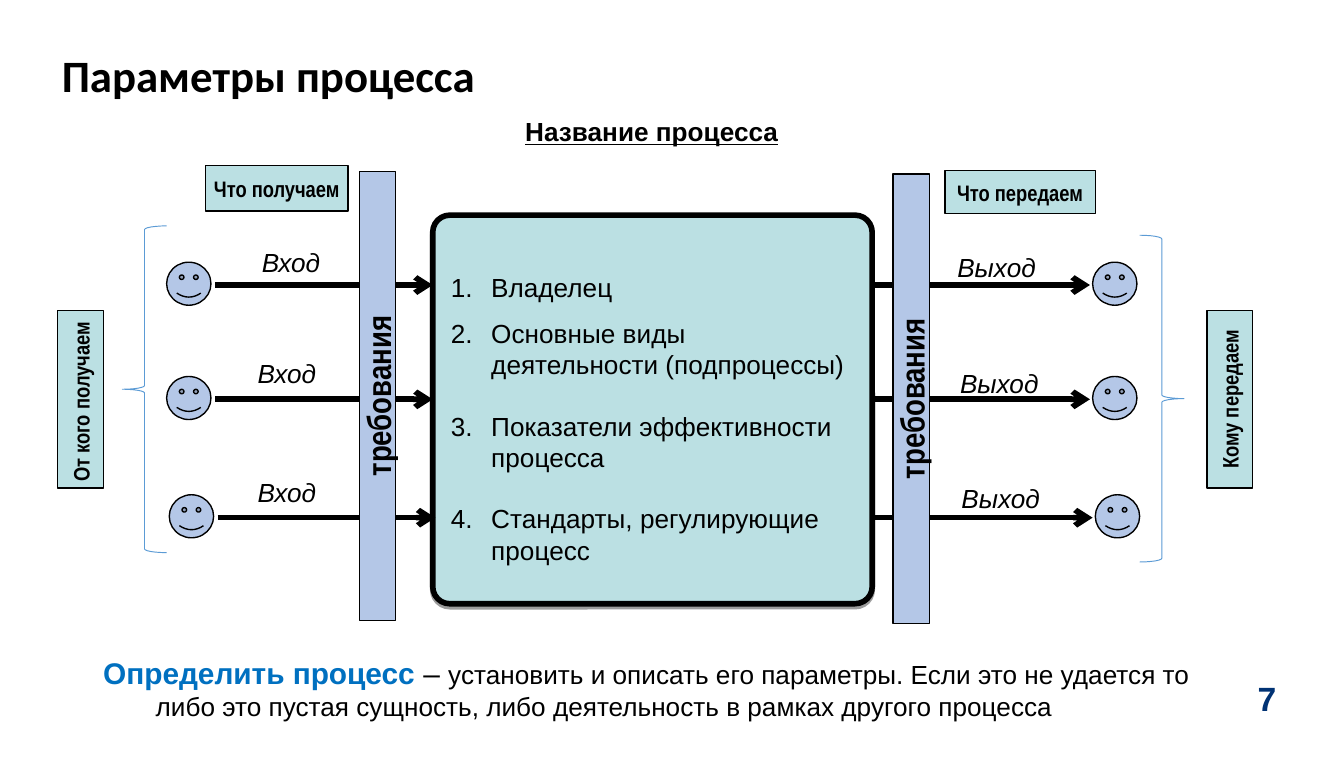
from dataclasses import dataclass

from lxml.etree import SubElement
from pptx import Presentation
from pptx.dml.color import RGBColor
from pptx.enum.shapes import MSO_CONNECTOR, MSO_SHAPE as SHAPE
from pptx.enum.text import MSO_ANCHOR as ANCHOR, PP_ALIGN as ALIGN
from pptx.oxml.ns import qn
from pptx.util import Inches, Pt

COLUMN = Inches(0.1)  # square grid: 100 columns across the slide
COLUMNS, ROWS = 100, 56.3


@dataclass(frozen=True)
class Theme:
    black: str = "000000"
    teal: str = "BBE0E3"
    blue: str = "B4C7E7"
    brace: str = "5B9BD5"
    accent: str = "0070C0"
    navy: str = "003274"
    font: str = "Arial"
    narrow: str = "Arial Narrow"
    heading: str = "Calibri"
    title: int = 24
    large: int = 18
    lead: int = 16
    body: int = 14
    small: int = 12


T = Theme()
ITEMS = [  # text, space before in points
    ("Владелец", 0),
    ("Основные виды деятельности (подпроцессы)", 8),
    ("Показатели эффективности процесса", 16),
    ("Стандарты, регулирующие процесс", 16),
]
FLOW_ROWS = [(0, 21.2), (0, 29.7), (0.2, 38.5)]  # shift right, row
INPUT_LABELS = [(17.2, 17.8), (16.9, 26.1), (16.9, 34.9)]
OUTPUT_LABELS = [(69.7, 18.2), (69.9, 26.8), (70, 35.4)]


def grid(*cells):
    return [round(c * COLUMN) for c in cells]


def style(r, size, color=T.black, name=T.font, **flags):
    r.font.size, r.font.name = Pt(size), name
    r.font.color.rgb = RGBColor.from_string(color)
    for flag, value in flags.items():
        setattr(r.font, flag, value)


def indent(p, columns):
    """Hanging indent."""
    pPr = p._p.get_or_add_pPr()
    pPr.set("marL", str(round(columns * COLUMN)))
    pPr.set("indent", str(-round(columns * COLUMN)))
    return pPr


def add_shape(slide, kind, box, fill=None, line=T.black, weight=0.75, turn=0):
    sp = slide.shapes.add_shape(kind, *grid(*box))
    sp.shadow.inherit = False
    if fill:
        sp.fill.solid()
        sp.fill.fore_color.rgb = RGBColor.from_string(fill)
    else:
        sp.fill.background()
    sp.line.color.rgb = RGBColor.from_string(line)
    sp.line.width = Pt(weight)
    sp.rotation = turn
    return sp


def add_plate(slide, text, box, fill=T.teal, size=T.small, turn=0):
    """Filled rectangle with one bold line of text."""
    tf = add_shape(slide, SHAPE.RECTANGLE, box, fill, turn=turn).text_frame
    tf.word_wrap = False
    tf.vertical_anchor = ANCHOR.MIDDLE
    p = tf.paragraphs[0]
    p.text, p.alignment = text, ALIGN.CENTER
    style(p.runs[0], size, name=T.narrow, bold=True)


def add_text(slide, text, box, size=T.body, color=T.black, align=ALIGN.CENTER, **flags):
    tf = slide.shapes.add_textbox(*grid(*box)).text_frame
    tf.word_wrap = True
    p = tf.paragraphs[0]
    p.text, p.alignment = text, align
    style(p.runs[0], size, color, **flags)
    return p


def add_arrow(slide, x, y, length):
    line = slide.shapes.add_connector(MSO_CONNECTOR.STRAIGHT, *grid(x, y, x + length, y))
    line.line.color.rgb = RGBColor.from_string(T.black)
    line.line.width = Pt(3)
    SubElement(line.line._get_or_add_ln(), qn("a:tailEnd"), type="arrow")
    SubElement(line._element.spPr, qn("a:effectLst"))


def add_title(slide, text):
    title = slide.shapes.title
    title.left, title.top, title.width, title.height = grid(3.6, 3.1, 83.5, 5.4)
    tf = title.text_frame
    tf.text = text
    tf.vertical_anchor = ANCHOR.MIDDLE
    p = tf.paragraphs[0]
    p.alignment, p.line_spacing = ALIGN.LEFT, 0.9
    style(p.runs[0], T.title, name=T.heading, bold=True)


def add_process(slide):
    """Central box with the numbered parameters."""
    sp = add_shape(slide, SHAPE.ROUNDED_RECTANGLE, (32.2, 16, 32.7, 28.9), T.teal, weight=3)
    sp.adjustments[0] = 0.044
    effects = sp._element.spPr.find(qn("a:effectLst"))
    shadow = SubElement(effects, qn("a:outerShdw"), blurRad="0", dist=str(Pt(1.6)),
                        dir="5400000", rotWithShape="0")
    color = SubElement(shadow, qn("a:srgbClr"), val=T.black)
    SubElement(color, qn("a:alpha"), val="38000")
    tf = sp.text_frame
    tf.word_wrap = True
    tf.vertical_anchor = ANCHOR.MIDDLE
    tf.margin_top = Inches(0.18)
    tf.text = "\n".join(text for text, _ in ITEMS)
    for p, (_, space) in zip(tf.paragraphs, ITEMS):
        p.alignment = ALIGN.LEFT
        if space:
            p.space_before = Pt(space)
        SubElement(indent(p, 3), qn("a:buFont"), typeface="+mj-lt")
        SubElement(p._p.pPr, qn("a:buAutoNum"), type="arabicPeriod")
        style(p.runs[0], T.body)


def add_flows(slide, arrow_x, face_x):
    """Three arrows, each with its participant."""
    for shift, y in FLOW_ROWS:
        add_arrow(slide, arrow_x + shift, y, 16.2)
        add_shape(slide, SHAPE.SMILEY_FACE, (face_x + shift, y - 1.7, 3.3, 3.2), T.blue)


def add_labels(slide, text, places):
    for x, y in places:
        add_text(slide, text, (x, y, 8.9, 3.4), italic=True)


def add_definition(slide):
    p = add_text(slide, "Определить процесс ", (6.7, 48.2, 83.7, 6.1), T.lead, T.accent,
                 ALIGN.LEFT, bold=True)
    indent(p, 3.9)
    for text, size in [
        ("– ", T.lead),
        ("установить и описать его параметры. Если это не удается то либо это "
         "пустая сущность, либо деятельность в рамках другого процесса", T.body),
    ]:
        r = p.add_run()
        r.text = text
        style(r, size, bold=False)


def main():
    prs = Presentation()
    prs.slide_width, prs.slide_height = grid(COLUMNS, ROWS)
    slide = prs.slides.add_slide(prs.slide_layouts[5])

    # Heading and process
    add_title(slide, "Параметры процесса")
    add_text(slide, "Название процесса", (23.5, 8.1, 50, 3.4), bold=True, underline=True)
    add_process(slide)

    # Inputs and outputs
    add_flows(slide, 16, 12.4)
    add_flows(slide, 64.9, 81.3)
    for x, y in [(11.4, 28.1), (51.1, 28.3)]:
        add_plate(slide, "требования", (x, y, 33.4, 2.7), T.blue, T.large, 270)
    add_labels(slide, "Вход", INPUT_LABELS)
    add_labels(slide, "Выход", OUTPUT_LABELS)

    # Captions and braces
    add_plate(slide, "Что получаем", (15.3, 12.3, 10.6, 3.4))
    add_plate(slide, "Что передаем", (70.3, 12.7, 11.2, 3.2))
    add_plate(slide, "От кого получаем ", (-0.6, 28, 13.2, 3.4), turn=270)
    add_plate(slide, "Кому передаем", (84.9, 28, 13.2, 3.4), turn=270)
    for x, y, turn in [(9.1, 16.8, 180), (84.8, 17.5, 0)]:
        add_shape(slide, SHAPE.RIGHT_BRACE, (x, y, 3.3, 24.3), None, T.brace, 0.5, turn)

    # Definition and page number
    add_definition(slide)
    add_text(slide, "7", (92.6, 49.9, 4, 4.1), T.large, T.navy, ALIGN.LEFT, bold=True)
    prs.save("out.pptx")


if __name__ == "__main__":
    main()
